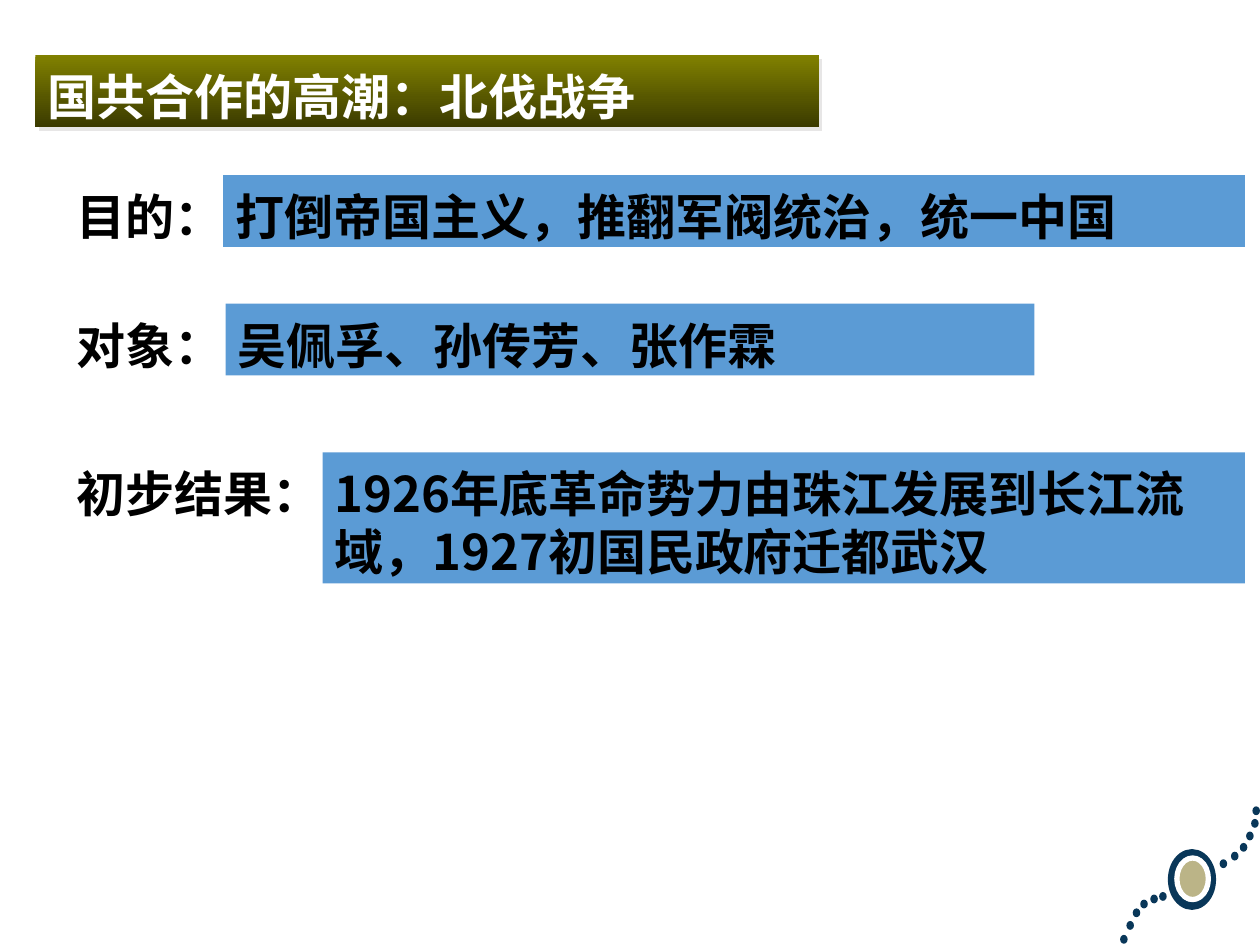
import pptx
import pptx.util
import pptx.dml.color
import pptx.enum.shapes
import pptx.enum.text
import pptx.oxml
import pptx.oxml.ns

FONT = "Noto Sans CJK SC"
NAVY, BLUE, SAND, WHITE, BLACK = "093759", "5B9BD5", "BBB487", "FFFFFF", "000000"
TITLE = "国共合作的高潮：北伐战争"
LABEL_LEFT = 0.51
ROWS = [
    (1.39, "目的：", 1.58, "打倒帝国主义，推翻军阀统治，统一中国", 1.77, 8.11, 0.57),
    (2.41, "对象：", 2, "吴佩孚、孙传芳、张作霖", 1.79, 6.42, 0.57),
    (3.59, "初步结果：", 2.42, "1926年底革命势力由珠江发展到长江流域，1927初国民政府迁都武汉", 2.56, 7.32, 1.04),
]
DOTS = [(8.89, 7.42), (8.94, 7.31), (8.99, 7.21), (9.05, 7.14), (9.13, 7.1), (9.2, 7.08),
        (9.68, 6.82), (9.77, 6.76), (9.84, 6.69), (9.89, 6.6), (9.93, 6.5), (9.94, 6.4)]
RINGS = [(9.3, 6.77, 0.32, 0.42, WHITE, NAVY, 4.5), (9.34, 6.81, 0.25, 0.33, SAND, WHITE, 3)]
SHADOW = (f'<a:effectLst {pptx.oxml.ns.nsdecls("a")}><a:outerShdw dist="35560" dir="2700000" algn="ctr" '
          'rotWithShape="0"><a:srgbClr val="E7E6E6"/></a:outerShdw></a:effectLst>')


def color(value):
    return pptx.dml.color.RGBColor.from_string(value)


def inches(*values):
    return [pptx.util.Inches(value) for value in values]


def write(box, text, ink):
    frame = box.text_frame
    frame.text = text
    frame.word_wrap = True
    frame.auto_size = pptx.enum.text.MSO_AUTO_SIZE.NONE
    frame.vertical_anchor = pptx.enum.text.MSO_ANCHOR.TOP
    frame.margin_left, frame.margin_top, frame.margin_right, frame.margin_bottom = inches(0.1, 0.1, 0.1, 0)
    para = frame.paragraphs[0]
    para.alignment = pptx.enum.text.PP_ALIGN.LEFT
    para.line_spacing = pptx.util.Pt(33)
    para.space_before = pptx.util.Pt(0)
    font = para.runs[0].font
    font.name, font.size, font.bold = FONT, pptx.util.Pt(28), True
    font.color.rgb = color(ink)
    east = pptx.oxml.parse_xml(f'<a:ea {pptx.oxml.ns.nsdecls("a")} typeface="{FONT}"/>')
    font._element.find(pptx.oxml.ns.qn("a:latin")).addnext(east)


def add_shape(page, kind, place, fill, line=None, width=0):
    shape = page.shapes.add_shape(kind, *inches(*place))
    shape.shadow.inherit = False
    shape.fill.solid()
    shape.fill.fore_color.rgb = color(fill)
    if line:
        shape.line.color.rgb = color(line)
        shape.line.width = pptx.util.Pt(width)
    else:
        shape.line.fill.background()
    return shape


def add_title(page):
    title = page.shapes.title
    title.left, title.top, title.width, title.height = inches(0.28, 0.44, 6.22, 0.57)
    title.fill.gradient()
    title.fill.gradient_angle = 270
    for stop, shade in zip(title.fill.gradient_stops, ("808000", "3B3B00")):
        stop.color.rgb = color(shade)
    title._element.spPr.append(pptx.oxml.parse_xml(SHADOW))
    write(title, TITLE, WHITE)


def main():
    deck = pptx.Presentation()
    deck.slide_width, deck.slide_height = inches(10, 7.5)
    page = deck.slides.add_slide(deck.slide_layouts.get_by_name("Title Only"))
    oval = pptx.enum.shapes.MSO_SHAPE.OVAL
    for left, top in DOTS:
        add_shape(page, oval, (left, top, 0.06, 0.07), NAVY)
    for *place, fill, line, width in RINGS:
        add_shape(page, oval, place, fill, line, width)
    add_title(page)
    for top, label, label_width, answer, left, width, height in ROWS:
        write(page.shapes.add_textbox(*inches(LABEL_LEFT, top, label_width, 0.57)), label, BLACK)
        bar = add_shape(page, pptx.enum.shapes.MSO_SHAPE.RECTANGLE, (left, top, width, height), BLUE)
        write(bar, answer, BLACK)
    deck.save("out.pptx")


if __name__ == "__main__":
    main()
